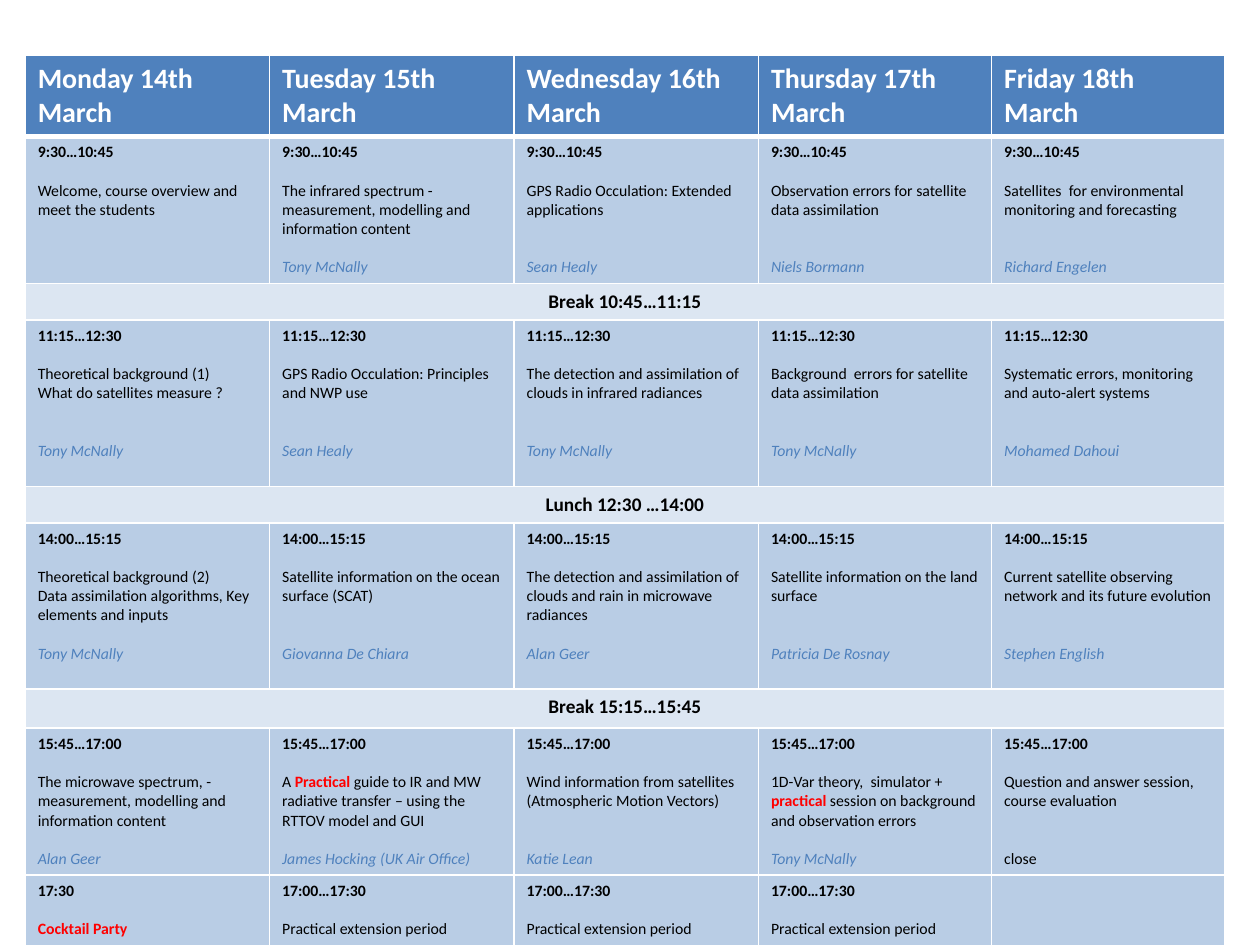
from dataclasses import dataclass

from lxml.etree import SubElement
from pptx import Presentation
from pptx.dml.color import RGBColor
from pptx.enum.text import PP_ALIGN
from pptx.oxml.ns import qn
from pptx.util import Inches, Pt

WHITE = RGBColor(0xFF, 0xFF, 0xFF)
BLACK = RGBColor(0, 0, 0)
RED = RGBColor(0xFF, 0, 0)
BLUE = RGBColor(0x4F, 0x81, 0xBD)
SESSION_FILL = RGBColor(0xB9, 0xCD, 0xE5)
BREAK_FILL = RGBColor(0xDC, 0xE6, 0xF2)

FONT = "Calibri"
LINE = 11  # height in points of one line of session text
TOPIC_SPACE = 4  # lines shared by a topic and the gap below it
COLUMN_WIDTHS = [1.94, 1.94, 1.94, 1.85, 1.85]
ROW_HEIGHTS = [0.63, 1.16, 0.29, 1.32, 0.29, 1.32, 0.31, 1.16, 0.62]


@dataclass
class Session:
    """A topic (red words between asterisks), its speaker and its line count."""
    topic: str
    speaker: str = ""
    lines: int = 2
    speaker_color: RGBColor = BLUE
    time: str = ""


DAYS = ["Monday 14th\nMarch", "Tuesday 15th\nMarch", "Wednesday 16th March",
        "Thursday 17th March", "Friday 18th\nMarch"]

# Row number: usual time and the sessions from Monday on
SESSIONS = {
    1: ("9:30…10:45", [
        Session("Welcome, course overview and meet the students"),
        Session("The infrared spectrum -\nmeasurement, modelling and information content",
                "Tony McNally", 3),
        Session("GPS Radio Occulation: Extended applications", "Sean Healy"),
        Session("Observation errors for satellite data assimilation", "Niels Bormann"),
        Session("Satellites  for environmental monitoring and forecasting", "Richard Engelen"),
    ]),
    3: ("11:15…12:30", [
        Session("Theoretical background (1)\nWhat do satellites measure ?", "Tony McNally"),
        Session("GPS Radio Occulation: Principles and NWP use", "Sean Healy"),
        Session("The detection and assimilation of clouds in infrared radiances", "Tony McNally"),
        Session("Background  errors for satellite data assimilation", "Tony McNally"),
        Session("Systematic errors, monitoring and auto-alert systems", "Mohamed Dahoui"),
    ]),
    5: ("14:00…15:15", [
        Session("Theoretical background (2)\nData assimilation algorithms, Key elements and inputs",
                "Tony McNally", 3),
        Session("Satellite information on the ocean surface (SCAT)", "Giovanna De Chiara"),
        Session("The detection and assimilation of clouds and rain in microwave radiances",
                "Alan Geer", 3),
        Session("Satellite information on the land surface", "Patricia De Rosnay"),
        Session("Current satellite observing network and its future evolution", "Stephen English"),
    ]),
    7: ("15:45…17:00", [
        Session("The microwave spectrum, -\nmeasurement, modelling and information content",
                "Alan Geer", 3),
        Session("A *Practical *guide to IR and MW radiative transfer – using the RTTOV model and GUI",
                "James Hocking (UK Air Office)", 3),
        Session("Wind information from satellites\n(Atmospheric Motion Vectors)", "Katie Lean"),
        Session("1D-Var theory,  simulator + *practical* session on background and observation errors",
                "Tony McNally", 3),
        Session("Question and answer session, course evaluation", "close", speaker_color=BLACK),
    ]),
    8: ("17:00…17:30", [
        Session("*Cocktail Party*", time="17:30"),
        *[Session("Practical extension period")] * 3,
    ]),
}
BREAKS = {2: "Break 10:45…11:15", 4: "Lunch 12:30 …14:00", 6: "Break 15:15…15:45"}


def style_cell(cell, fill, top=1, bottom=1):
    """Fill a cell and give it white borders, with widths in points."""
    properties = cell._tc.get_or_add_tcPr()
    for side, width in (("L", 1), ("R", 1), ("T", top), ("B", bottom)):
        line = SubElement(properties, qn(f"a:ln{side}"), w=str(Pt(width)))
        solid = SubElement(line, qn("a:solidFill"))
        SubElement(solid, qn("a:srgbClr"), val=str(WHITE))
    cell.fill.solid()
    cell.fill.fore_color.rgb = fill


def add_paragraph(cell, text, size=9, color=BLACK, bold=False, italic=False, gap=0):
    """Write a paragraph below a gap counted in lines; asterisks enclose red words."""
    frame = cell.text_frame
    para = frame.add_paragraph() if frame.text else frame.paragraphs[0]
    para.space_before = Pt(gap * LINE)
    para.font.name = FONT
    para.font.size = Pt(size)
    para.font.color.rgb = color
    para.font.bold = bold
    para.font.italic = italic
    for index, part in enumerate(text.split("*")):
        if part:
            span = para.add_run()
            span.text = part
            if index % 2:
                span.font.bold = True
                span.font.color.rgb = RED
    return para


def fill_header(table):
    for column, day in enumerate(DAYS):
        for text in day.split("\n"):
            add_paragraph(table.cell(0, column), text, 16, WHITE, bold=True)


def fill_break(table, row, text):
    cell = table.cell(row, 0)
    cell.merge(table.cell(row, len(DAYS) - 1))
    add_paragraph(cell, text, 11, bold=True).alignment = PP_ALIGN.CENTER


def fill_session(cell, time, session):
    add_paragraph(cell, session.time or time, bold=True)
    for index, text in enumerate(session.topic.split("\n")):
        add_paragraph(cell, text, gap=0 if index else 1)
    if session.speaker:
        add_paragraph(cell, session.speaker, color=session.speaker_color,
                      italic=session.speaker_color == BLUE,
                      gap=TOPIC_SPACE - session.lines)


def add_timetable(page):
    table = page.shapes.add_table(
        len(ROW_HEIGHTS), len(COLUMN_WIDTHS), Inches(0.2), Inches(0.44),
        Inches(sum(COLUMN_WIDTHS)), Inches(sum(ROW_HEIGHTS))).table
    table.horz_banding = False
    for column, width in zip(table.columns, COLUMN_WIDTHS):
        column.width = Inches(width)
    for number, height in enumerate(ROW_HEIGHTS):
        table.rows[number].height = Inches(height)
        fill = BLUE if number == 0 else BREAK_FILL if number in BREAKS else SESSION_FILL
        for cell in table.rows[number].cells:
            style_cell(cell, fill, top=3 if number == 1 else 1, bottom=3 if number == 0 else 1)
    return table


def main():
    deck = Presentation()
    deck.slide_width, deck.slide_height = Inches(10), Inches(7.5)
    page = deck.slides.add_slide(deck.slide_layouts[6])
    table = add_timetable(page)
    fill_header(table)
    for row, text in BREAKS.items():
        fill_break(table, row, text)
    for row, (time, sessions) in SESSIONS.items():
        for column, session in enumerate(sessions):
            fill_session(table.cell(row, column), time, session)
    deck.save("out.pptx")


if __name__ == "__main__":
    main()
